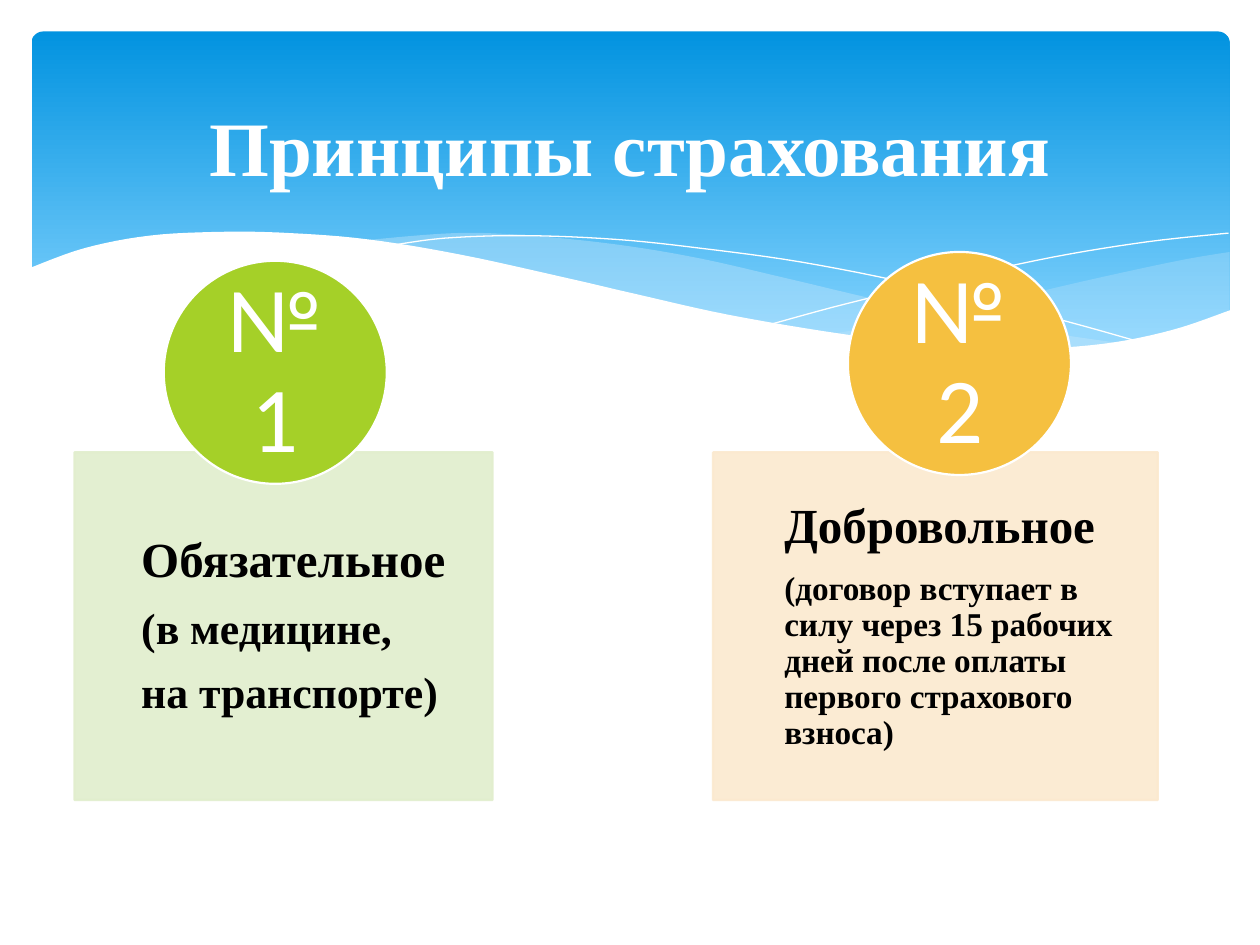
from lxml.etree import SubElement
from pptx import Presentation
from pptx.dml.color import RGBColor as RGB
from pptx.enum.shapes import MSO_SHAPE as Shape
from pptx.enum.text import MSO_ANCHOR as Anchor, PP_ALIGN as Align
from pptx.oxml.ns import qn
from pptx.util import Inches as In, Pt

WHITE, BLACK = RGB(255, 255, 255), RGB(0, 0, 0)
DEEP, SKY, MIST = RGB(2, 147, 224), RGB(131, 211, 254), RGB(198, 231, 252)
LIME, MINT = RGB(165, 208, 40), RGB(225, 238, 205)
AMBER, CREAM = RGB(245, 192, 64), RGB(251, 233, 207)
SERIF, SANS = "Times New Roman", "Calibri"

# Content
TITLE = "Принципы страхования"
# card left, width, fill; disc left, top, fill; label; lines with sizes
CARDS = [
    (0.59, 3.32, MINT, 1.3, 2.07, LIME, "№ 1",
     [("Обязательное", 28), ("(в медицине,", 25), ("на транспорте)", 25)]),
    (5.66, 3.53, CREAM, 6.73, 2, AMBER, "№ 2",
     [("Добровольное", 28),
      ("(договор вступает в силу через 15 рабочих дней после оплаты "
       "первого страхового взноса)", 19)]),
]
TOP, HIGH, DISC, PAD = 3.59, 2.76, 1.77, 0.26

# Waves: smooth arcs through key points, joined by straight sides;
# then fill and opacity in percent (no fill means a thin white line)
WAVES = [
    ([[(9.76, 2), (9.35, 2.07), (8.61, 2.23), (7.53, 2.48), (6.61, 2.65)],
      [(6.61, 2.65), (7.05, 2.71), (7.57, 2.76), (8.14, 2.78), (8.72, 2.74),
       (9.21, 2.65), (9.76, 2.47)]], MIST, 29),
    ([[(8.93, 2.73), (8.07, 2.6), (7.06, 2.4), (6.29, 2.22), (5.55, 2.05),
       (4.89, 1.94), (4.2, 1.87), (3.61, 1.85), (2.86, 1.91)],
      [(2.86, 1.91), (3.62, 2.03), (4.49, 2.22), (5.3, 2.4), (6.01, 2.55),
       (6.65, 2.66), (7.22, 2.74), (7.85, 2.78), (8.38, 2.78), (8.93, 2.73)]],
     MIST, 40),
    ([[(3.09, 1.95), (3.53, 1.89), (4.16, 1.87), (4.89, 1.9), (5.56, 1.97),
       (6.36, 2.08), (7.27, 2.26), (8.31, 2.51), (9.07, 2.72)]], None, 100),
    ([[(6.13, 2.57), (6.72, 2.41), (7.48, 2.23), (8.36, 2.04), (9.1, 1.92),
       (9.75, 1.85)]], None, 100),
    ([[(9.77, 2.46), (9.3, 2.62), (8.75, 2.73), (8.09, 2.77), (7.44, 2.74),
       (6.68, 2.65), (5.79, 2.5), (5.03, 2.33), (4.47, 2.2), (3.65, 2.02),
       (2.92, 1.9), (2.3, 1.85), (1.77, 1.84), (1.19, 1.87), (0.67, 1.97),
       (0.23, 2.13)], [(0.23, 3.29), (9.77, 3.29)]], WHITE, 100),
]

deck = Presentation()
deck.slide_width, deck.slide_height = In(10), In(7.5)
page = deck.slides.add_slide(deck.slide_layouts[6])
parts = page.shapes


def fade(fmt, rgb, share=100):
    """Set a solid colour, with an opacity in percent."""
    fmt.solid()
    fmt.fore_color.rgb = rgb
    if share < 100:
        clr = fmt._xPr.find(qn("a:solidFill"))[0]
        SubElement(clr, qn("a:alpha")).set("val", str(share * 1000))


def smooth(keys, steps=6):
    """Catmull-Rom curve through the key points."""
    if len(keys) < 3:
        return keys
    ends = [keys[0], *keys, keys[-1]]
    out = [keys[0]]
    for a, b, c, d in zip(ends, ends[1:], ends[2:], ends[3:]):
        for n in range(1, steps + 1):
            t = n / steps
            out.append(tuple(
                (2 * q + (r - p) * t + (2 * p - 5 * q + 4 * r - s) * t**2
                 + (3 * q - p - 3 * r + s) * t**3) / 2
                for p, q, r, s in zip(a, b, c, d)))
    return out


def block(kind, box, rgb, edge, share=100):
    item = parts.add_shape(kind, *map(In, box))
    item.shadow.inherit = False
    fade(item.fill, rgb, share)
    item.line.width = Pt(1.25)
    fade(item.line.fill, edge, share)


def label(box, rows, font, rgb, bold, align, pads=(0, 0, 0, 0), line=0.9):
    frame = parts.add_textbox(*map(In, box)).text_frame
    frame.word_wrap = True
    frame.vertical_anchor = Anchor.MIDDLE
    (frame.margin_left, frame.margin_top,
     frame.margin_right, frame.margin_bottom) = map(In, pads)
    frame.text = "\n".join(text for text, size in rows)
    for para, (text, size) in zip(frame.paragraphs, rows):
        para.alignment = align
        para.line_spacing = line
        if line < 1:
            para.space_after = Pt(round(size * 0.38, 1))
        face = para.runs[0].font
        face.name, face.size, face.bold = font, Pt(size), bold
        face.color.rgb = rgb


# Banner
band = parts.add_shape(Shape.ROUNDED_RECTANGLE, In(0.25), In(0.25), In(9.51), In(2.7))
band.adjustments[0] = 0.034
band.shadow.inherit = False
band.line.fill.background()
band.fill.gradient()
band.fill.gradient_angle = 270
for stop, rgb, at in zip(band.fill.gradient_stops, (DEEP, SKY), (0, 0.9)):
    stop.color.rgb, stop.position = rgb, at

for arcs, rgb, share in WAVES:
    dots = [(In(x), In(y)) for arc in arcs for x, y in smooth(arc)]
    pen = parts.build_freeform(*dots[0], scale=1.0)
    pen.add_line_segments(dots[1:], close=rgb is not None)
    wave = pen.convert_to_shape()
    wave.shadow.inherit = False
    if rgb is None:
        wave.fill.background()
        wave.line.color.rgb, wave.line.width = WHITE, 0
    else:
        fade(wave.fill, rgb, share)
        wave.line.fill.background()

label((0.5, 0.37, 9, 1.57), [(TITLE, 44)], SERIF, WHITE, True, Align.CENTER,
      (0.1, 0.05, 0.1, 0.05), 1)

# Cards, each with a numbered disc
for left, wide, pale, x, y, rgb, name, rows in CARDS:
    block(Shape.RECTANGLE, (left, TOP, wide, HIGH), pale, pale, 90)
    shift = wide * 0.16
    label((left + shift, TOP, wide - shift, HIGH), rows, SERIF, BLACK, True,
          Align.LEFT, (0, 0.22, 0.22, 0.22))
    block(Shape.OVAL, (x, y, DISC, DISC), rgb, WHITE)
    side = DISC - 2 * PAD
    label((x + PAD, y + PAD, side, side), [(name, 53)], SANS, WHITE, False,
          Align.CENTER)

deck.save("out.pptx")
